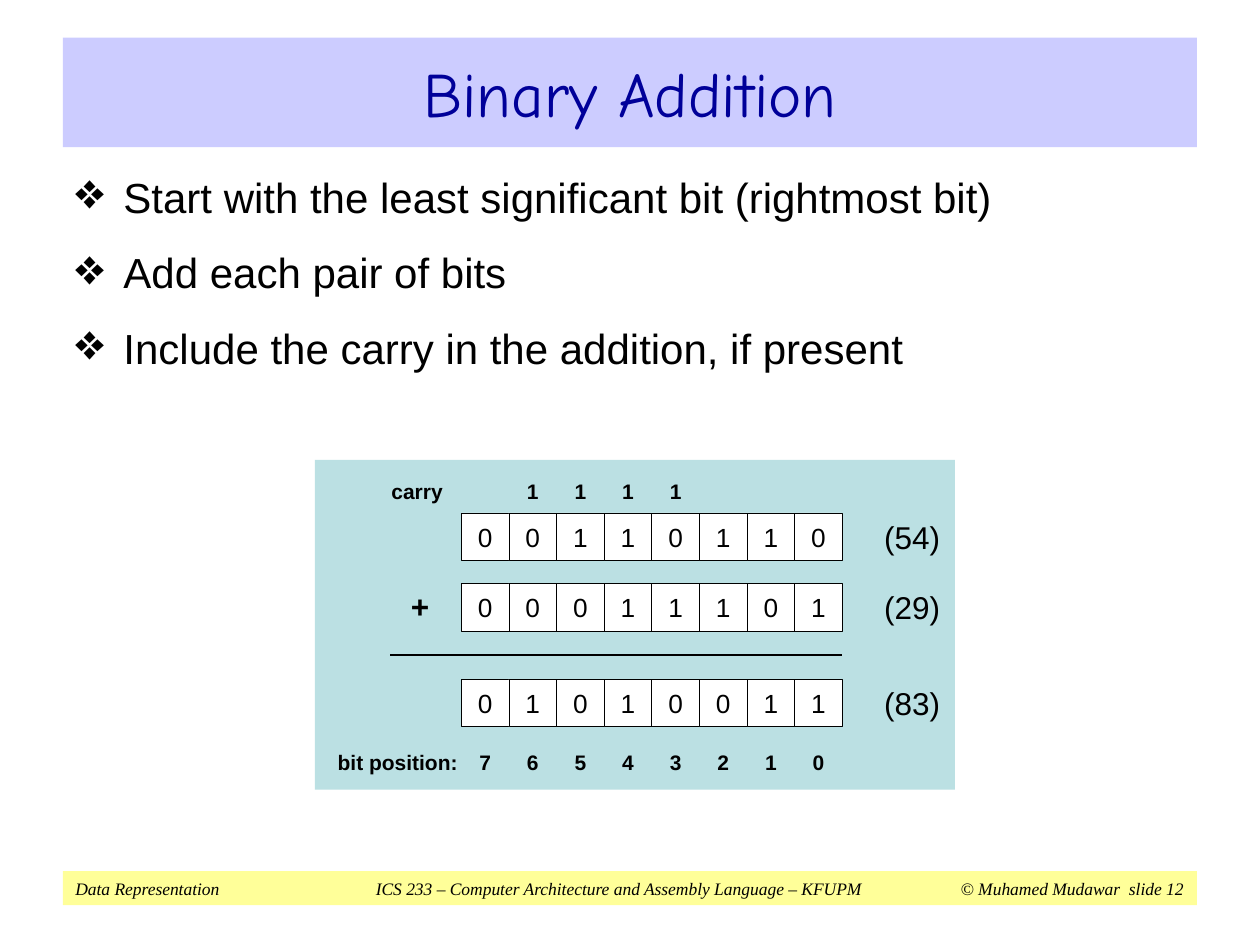
from lxml import etree
from pptx import Presentation
from pptx.dml.color import RGBColor
from pptx.enum.shapes import MSO_CONNECTOR, MSO_SHAPE
from pptx.enum.text import MSO_ANCHOR, PP_ALIGN
from pptx.oxml.ns import qn
from pptx.util import Cm, Pt

BLACK = RGBColor(0x00, 0x00, 0x00)
WHITE = RGBColor(0xFF, 0xFF, 0xFF)
NAVY = RGBColor(0x00, 0x00, 0x99)
LAVENDER = RGBColor(0xCC, 0xCC, 0xFF)
YELLOW = RGBColor(0xFF, 0xFF, 0x99)
PALE_TEAL = RGBColor(0xBB, 0xE0, 0xE3)

CELL = 0.96
BITS_LEFT = 2.95
OPERANDS = [
    (1.07, "00110110", "(54)"),
    (2.49, "00011101", "(29)"),
    (4.42, "01010011", "(83)"),
]


def add_box(slide, left, top, width, height, fill, line=None):
    """Add a flat rectangle, outlined only when a line colour is given."""
    shape = slide.shapes.add_shape(
        MSO_SHAPE.RECTANGLE, Cm(left), Cm(top), Cm(width), Cm(height))
    shape.shadow.inherit = False
    shape.fill.solid()
    shape.fill.fore_color.rgb = fill
    if line is None:
        shape.line.fill.background()
    else:
        shape.line.color.rgb = line
        shape.line.width = Pt(0.38)
    return shape


def style_font(paragraph, size, name="Arial", color=BLACK, bold=False, italic=False):
    """Set the font shared by all runs of a paragraph."""
    font = paragraph.font
    font.size, font.name, font.bold, font.italic = Pt(size), name, bold, italic
    font.color.rgb = color


def clear_margins(frame):
    """Remove all the insets of a text frame."""
    frame.margin_left = frame.margin_right = 0
    frame.margin_top = frame.margin_bottom = 0


def add_label(slide, center, middle, text, size, bold=False, width=0.4):
    """Add one line of text centred on a point."""
    height = size * 0.042
    label = slide.shapes.add_textbox(
        Cm(center - width / 2), Cm(middle - height / 2), Cm(width), Cm(height))
    frame = label.text_frame
    clear_margins(frame)
    frame.word_wrap = False
    frame.vertical_anchor = MSO_ANCHOR.MIDDLE
    paragraph = frame.paragraphs[0]
    paragraph.text = text
    paragraph.alignment = PP_ALIGN.CENTER
    style_font(paragraph, size, bold=bold)


def add_title(slide, left, top, width, height):
    """Place the title band."""
    frame = add_box(slide, left, top, width, height, LAVENDER).text_frame
    paragraph = frame.paragraphs[0]
    paragraph.text = "Binary Addition"
    paragraph.alignment = PP_ALIGN.CENTER
    style_font(paragraph, 36, "Comic Neue", NAVY)


def add_steps(slide, left, top, width, height):
    """Place the bulleted steps."""
    steps = [
        "Start with the least significant bit (rightmost bit)",
        "Add each pair of bits",
        "Include the carry in the addition, if present",
    ]
    frame = slide.shapes.add_textbox(
        Cm(left), Cm(top), Cm(width), Cm(height)).text_frame
    frame.word_wrap = True
    for index, step in enumerate(steps):
        paragraph = frame.add_paragraph() if index else frame.paragraphs[0]
        paragraph.text = step
        paragraph.space_before = Pt(14.4)
        style_font(paragraph, 24)
        properties = paragraph._p.get_or_add_pPr()
        properties.set("marL", str(Cm(0.97)))
        properties.set("indent", str(-Cm(0.97)))
        default_font = properties.find(qn("a:defRPr"))
        default_font.addprevious(etree.Element(qn("a:buSzPct"), val="120000"))
        default_font.addprevious(etree.Element(qn("a:buChar"), char="❖"))


def add_bit_row(slide, left, top, bits):
    """Place a row of boxed bits."""
    for column, bit in enumerate(bits):
        cell = add_box(slide, left + column * CELL, top, CELL, CELL, WHITE, BLACK)
        clear_margins(cell.text_frame)
        paragraph = cell.text_frame.paragraphs[0]
        paragraph.text = bit
        paragraph.alignment = PP_ALIGN.CENTER
        style_font(paragraph, 15)


def add_sum_line(slide, left, right, top):
    """Place the rule above the sum."""
    line = slide.shapes.add_connector(
        MSO_CONNECTOR.STRAIGHT, Cm(left), Cm(top), Cm(right), Cm(top))
    line.line.color.rgb = BLACK
    line.line.width = Pt(1.13)
    etree.SubElement(line._element.spPr, qn("a:effectLst"))


def add_addition(slide, left, top, width, height):
    """Place the worked addition on its panel."""
    add_box(slide, left, top, width, height, PALE_TEAL)
    bits_left = left + BITS_LEFT
    for row_top, bits, value in OPERANDS:
        add_bit_row(slide, bits_left, top + row_top, bits)
        add_label(slide, left + 12.04, top + row_top + CELL / 2, value, 18, width=1.4)
    add_label(slide, left + 2.12, top + 2.95, "+", 18, bold=True)
    add_sum_line(slide, left + 1.52, bits_left + 8 * CELL, top + 3.94)

    captions = [
        ("carry", 2.06, 0.64, 1.3, [" ", "1", "1", "1", "1"]),
        ("bit position:", 1.67, 6.1, 2.6, "76543210"),
    ]
    for caption, center, middle, caption_width, digits in captions:
        add_label(slide, left + center, top + middle, caption, 12, True, caption_width)
        for column, digit in enumerate(digits):
            if digit.strip():
                digit_center = bits_left + (column + 0.5) * CELL
                add_label(slide, digit_center, top + middle, digit, 12, bold=True)


def add_footer(slide, left, top, width, height):
    """Place the footer band with centred and right-hand tab stops."""
    frame = add_box(slide, left, top, width, height, YELLOW).text_frame
    paragraph = frame.paragraphs[0]
    paragraph.text = "\t".join([
        "Data Representation",
        "ICS 233 – Computer Architecture and Assembly Language – KFUPM",
        "© Muhamed Mudawar  slide 12",
    ])
    paragraph.alignment = PP_ALIGN.LEFT
    style_font(paragraph, 10, "Times New Roman", italic=True)
    stops = etree.Element(qn("a:tabLst"))
    for position, alignment in [(10.95, "ctr"), (22.34, "r")]:
        etree.SubElement(stops, qn("a:tab"), pos=str(Cm(position)), algn=alignment)
    paragraph._p.pPr.find(qn("a:defRPr")).addprevious(stops)


def main():
    """Build and save the presentation."""
    presentation = Presentation()
    presentation.slide_width, presentation.slide_height = Cm(25.4), Cm(19.05)
    slide = presentation.slides.add_slide(presentation.slide_layouts[6])
    add_footer(slide, 1.27, 17.56, 22.86, 0.69)
    add_title(slide, 1.27, 0.76, 22.86, 2.21)
    add_steps(slide, 1.27, 3.33, 22.86, 5.08)
    add_addition(slide, 6.35, 9.27, 12.9, 6.65)
    presentation.save("out.pptx")


if __name__ == "__main__":
    main()
